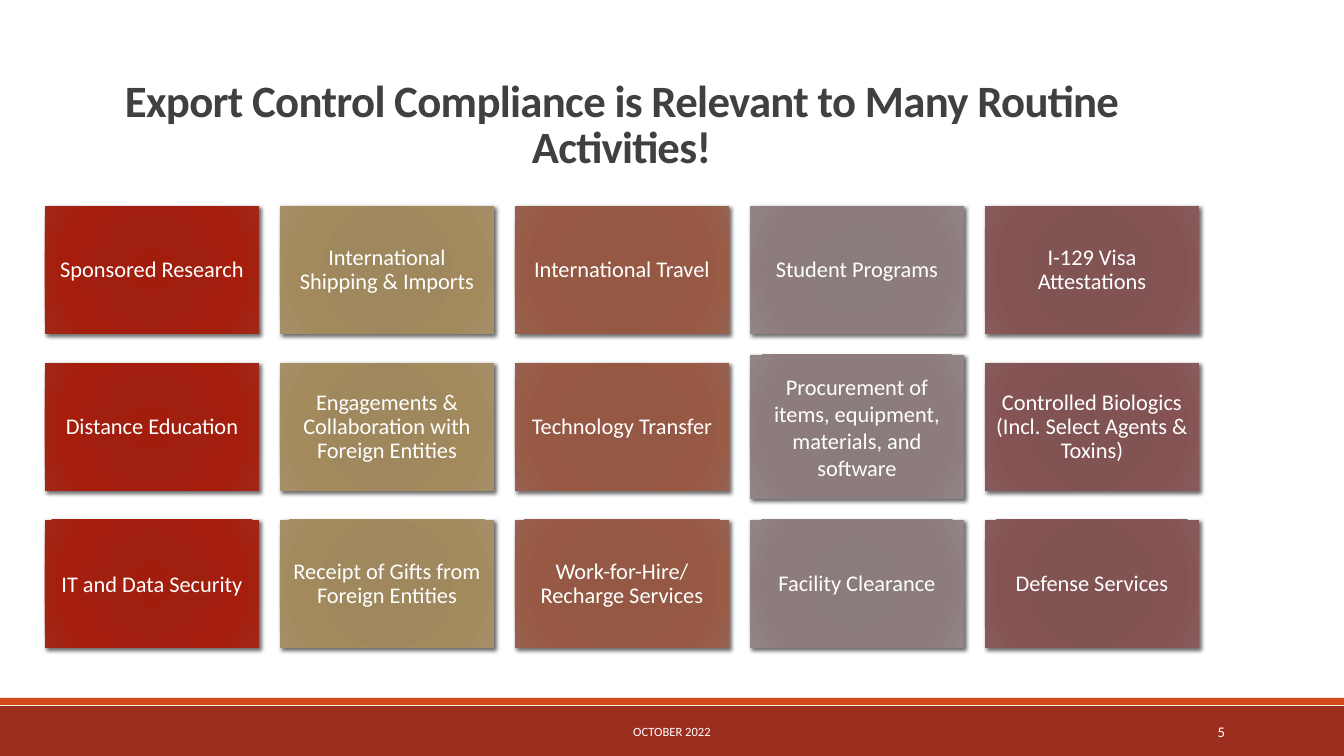
"""Build the slide on routine activities touched by export control compliance."""
from dataclasses import dataclass

from pptx import Presentation
from pptx.dml.color import RGBColor
from pptx.enum.shapes import MSO_SHAPE
from pptx.enum.text import MSO_ANCHOR, MSO_AUTO_SIZE, PP_ALIGN
from pptx.oxml import parse_xml
from pptx.oxml.ns import nsdecls
from pptx.slide import Slide
from pptx.text.text import TextFrame
from pptx.util import Emu, Pt

EMU_PER_PX = 914400 / 100.8
FONT = "Calibri"

WHITE = RGBColor(0xFF, 0xFF, 0xFF)
BLACK = RGBColor(0x00, 0x00, 0x00)
CHARCOAL = RGBColor(0x40, 0x40, 0x40)
BRICK = RGBColor(0x9B, 0x2D, 0x1F)
ORANGE = RGBColor(0xD3, 0x48, 0x17)

STOP_POSITIONS = (0, 34, 70, 100)
RED = (RGBColor(0xA2, 0x1D, 0x0C), RGBColor(0xA0, 0x1F, 0x0F),
       RGBColor(0xA6, 0x1D, 0x0C), RGBColor(0xA1, 0x28, 0x19))
SAND = (RGBColor(0x9F, 0x87, 0x5B), RGBColor(0x9F, 0x88, 0x5D),
        RGBColor(0xA3, 0x8A, 0x5D), RGBColor(0xA5, 0x8F, 0x67))
RUST = (RGBColor(0x94, 0x57, 0x42), RGBColor(0x94, 0x58, 0x44),
        RGBColor(0x98, 0x59, 0x44), RGBColor(0x98, 0x60, 0x4E))
GREY = (RGBColor(0x89, 0x79, 0x7A), RGBColor(0x8A, 0x7B, 0x7C),
        RGBColor(0x8C, 0x7C, 0x7D), RGBColor(0x92, 0x83, 0x84))
PLUM = (RGBColor(0x82, 0x51, 0x51), RGBColor(0x82, 0x53, 0x53),
        RGBColor(0x85, 0x53, 0x53), RGBColor(0x87, 0x5B, 0x5B))
COLUMN_GRADIENTS = (RED, SAND, RUST, GREY, PLUM)

GRID_LEFT, GRID_TOP = 45, 206
COLUMN_PITCH, ROW_PITCH = 235, 157
TILE_WIDTH, TILE_HEIGHT = 214, 128
TILE_INSET = 7


@dataclass(frozen=True)
class Activity:
    name: str
    extra_height: int = 0
    line_spacing: float = 0.9


@dataclass(frozen=True)
class Band:
    top: int
    height: int
    color: RGBColor


@dataclass(frozen=True)
class FooterNote:
    text: str
    left: int
    width: int
    size: float
    align: PP_ALIGN


ACTIVITY_ROWS = (
    (Activity("Sponsored Research"),
     Activity("International Shipping & Imports"),
     Activity("International Travel"),
     Activity("Student Programs"),
     Activity("I-129 Visa Attestations")),
    (Activity("Distance Education"),
     Activity("Engagements & Collaboration with Foreign Entities"),
     Activity("Technology Transfer"),
     Activity("Procurement of items, equipment, materials, and software", 16, 1.0),
     Activity("Controlled Biologics (Incl. Select Agents & Toxins)")),
    (Activity("IT and Data Security", line_spacing=1.0),
     Activity("Receipt of Gifts from Foreign Entities"),
     Activity("Work-for-Hire/ Recharge Services"),
     Activity("Facility Clearance"),
     Activity("Defense Services")),
)
BANDS = (Band(706, 50, BRICK), Band(698, 7, ORANGE))
FOOTER_NOTES = (
    FooterNote("OCTOBER 2022", 406, 532, 9, PP_ALIGN.CENTER),
    FooterNote("5", 1091, 144, 10.5, PP_ALIGN.RIGHT),
)


def px(length: int) -> Emu:
    """Turn pixels into EMU."""
    return Emu(round(length * EMU_PER_PX))


def write(frame: TextFrame, text: str, size: float, color: RGBColor,
          align: PP_ALIGN, line_spacing: float = 1.0) -> None:
    """Fill a frame with one formatted paragraph."""
    frame.text = text
    frame.word_wrap = True
    frame.auto_size = MSO_AUTO_SIZE.NONE
    paragraph = frame.paragraphs[0]
    paragraph.alignment = align
    paragraph.line_spacing = line_spacing
    paragraph.font.name = FONT
    paragraph.font.size = Pt(size)
    paragraph.font.color.rgb = color


def add_title(slide: Slide, text: str) -> None:
    """Place and format the title placeholder."""
    title = slide.shapes.title
    title.left, title.top, title.width, title.height = map(px, (44, 76, 1155, 86))
    frame = title.text_frame
    write(frame, text, 32, CHARCOAL, PP_ALIGN.CENTER, 0.85)
    frame.vertical_anchor = MSO_ANCHOR.TOP
    paragraph = frame.paragraphs[0]
    paragraph.font.bold = True
    paragraph.runs[0]._r.get_or_add_rPr().set("spc", "-50")


def add_band(slide: Slide, band: Band) -> None:
    """Draw a full-width footer band."""
    bar = slide.shapes.add_shape(
        MSO_SHAPE.RECTANGLE, 0, px(band.top), px(1344), px(band.height))
    bar.shadow.inherit = False
    bar.fill.solid()
    bar.fill.fore_color.rgb = band.color
    bar.line.fill.background()


def add_footer_note(slide: Slide, note: FooterNote) -> None:
    """Write a small note on the footer band."""
    box = slide.shapes.add_textbox(px(note.left), px(712), px(note.width), px(40))
    write(box.text_frame, note.text, note.size, WHITE, note.align)
    box.text_frame.vertical_anchor = MSO_ANCHOR.MIDDLE


def add_tile(slide: Slide, activity: Activity, row: int, column: int) -> None:
    """Draw one activity tile with its radial gradient and drop shadow."""
    tile = slide.shapes.add_shape(
        MSO_SHAPE.RECTANGLE,
        px(GRID_LEFT + column * COLUMN_PITCH),
        px(GRID_TOP + row * ROW_PITCH - activity.extra_height // 2),
        px(TILE_WIDTH),
        px(TILE_HEIGHT + activity.extra_height),
    )
    tile.line.fill.background()
    tile.shadow.inherit = False
    stops = "".join(
        f'<a:gs pos="{position * 1000}"><a:srgbClr val="{color}"/></a:gs>'
        for position, color in zip(STOP_POSITIONS, COLUMN_GRADIENTS[column]))
    properties = tile._element.spPr
    properties.find("{*}ln").addprevious(parse_xml(
        f'<a:gradFill {nsdecls("a")} rotWithShape="1"><a:gsLst>{stops}</a:gsLst>'
        '<a:path path="circle"><a:fillToRect l="100000" t="100000" '
        'r="100000" b="100000"/></a:path></a:gradFill>'))
    properties.find("{*}effectLst").append(parse_xml(
        f'<a:outerShdw {nsdecls("a")} blurRad="{Pt(3)}" dist="{Pt(2)}" '
        f'dir="2700000" rotWithShape="0"><a:srgbClr val="{BLACK}">'
        '<a:alpha val="60000"/></a:srgbClr></a:outerShdw>'))
    frame = tile.text_frame
    write(frame, activity.name, 16, WHITE, PP_ALIGN.CENTER, activity.line_spacing)
    frame.vertical_anchor = MSO_ANCHOR.MIDDLE
    frame.margin_left = frame.margin_right = px(TILE_INSET)
    frame.margin_top = frame.margin_bottom = px(TILE_INSET)


def main() -> None:
    """Assemble and save the slide."""
    deck = Presentation()
    deck.slide_width, deck.slide_height = px(1344), px(756)
    slide = deck.slides.add_slide(deck.slide_layouts[5])
    for band in BANDS:
        add_band(slide, band)
    add_title(slide, "Export Control Compliance is Relevant to Many Routine Activities!")
    for note in FOOTER_NOTES:
        add_footer_note(slide, note)
    for row, activities in enumerate(ACTIVITY_ROWS):
        for column, activity in enumerate(activities):
            add_tile(slide, activity, row, column)
    deck.save("out.pptx")


if __name__ == "__main__":
    main()
